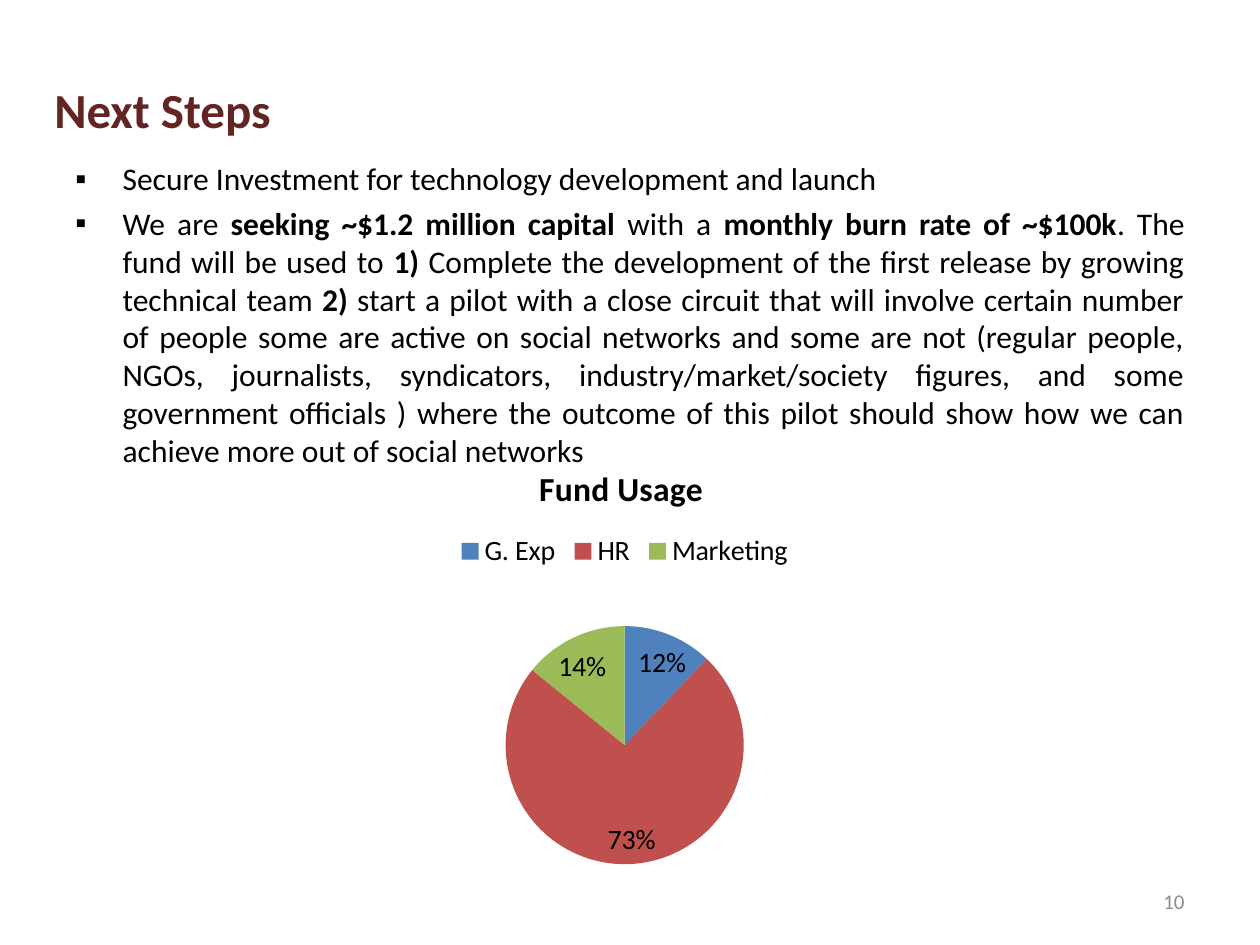
from lxml.etree import SubElement
from pptx import Presentation
from pptx.chart.data import CategoryChartData
from pptx.dml.color import RGBColor
from pptx.enum.chart import XL_CHART_TYPE as ChartType, XL_LABEL_POSITION as LabelPosition
from pptx.enum.chart import XL_LEGEND_POSITION as LegendPosition
from pptx.enum.text import MSO_ANCHOR as Anchor, PP_ALIGN as Align
from pptx.oxml.ns import qn
from pptx.util import Pt

FONT = "Calibri"
BLACK = RGBColor(0x00, 0x00, 0x00)
MAROON = RGBColor(0x63, 0x25, 0x23)
GRAY = RGBColor(0x8C, 0x8C, 0x8C)
BLUE = RGBColor(0x4F, 0x81, 0xBD)
RED = RGBColor(0xC0, 0x50, 0x4D)
GREEN = RGBColor(0x9B, 0xBB, 0x59)

STEPS = [
    [("Secure Investment for technology development and launch", False)],
    [
        ("We are ", False),
        ("seeking ~$1.2 million capital", True),
        (" with a ", False),
        ("monthly burn rate of ~$100k", True),
        (". The fund will be used to ", False),
        ("1)", True),
        (" Complete the development of the first release by growing technical team ", False),
        ("2)", True),
        (" start a pilot with a close circuit that will involve certain number of people "
         "some are active on social networks and some are not (regular people, NGOs, "
         "journalists, syndicators, industry/market/society figures, and some government "
         "officials ) where the outcome of this pilot should show how we can achieve more "
         "out of social networks", False),
    ],
]
FUND_USAGE = [("G. Exp", 12, BLUE), ("HR", 73, RED), ("Marketing", 14, GREEN)]


def style_font(font, size, color=BLACK, bold=False):
    """Set the typeface, size, colour and weight of a font."""
    font.name, font.size, font.bold = FONT, Pt(size), bold
    font.color.rgb = color


def add_frame(slide, box, anchor=Anchor.TOP):
    """Add a wrapping text box and return its text frame."""
    frame = slide.shapes.add_textbox(*map(Pt, box)).text_frame
    frame.word_wrap = True
    frame.vertical_anchor = anchor
    return frame


def add_line(slide, box, text, size, color, bold=False, align=Align.LEFT, anchor=Anchor.TOP):
    """Place one line of text in a box."""
    paragraph = add_frame(slide, box, anchor).paragraphs[0]
    paragraph.alignment = align
    run = paragraph.add_run()
    run.text = text
    style_font(run.font, size, color, bold)


def add_bullet(paragraph, indent):
    """Give a paragraph a hanging square bullet."""
    props = paragraph._p.get_or_add_pPr()
    props.set("marL", str(Pt(indent)))
    props.set("indent", str(-Pt(indent)))
    SubElement(props, qn("a:buFont"), typeface="Arial")
    SubElement(props, qn("a:buChar"), char="▪")


def add_steps(slide, box):
    """Place the justified list of next steps."""
    frame = add_frame(slide, box)
    for index, step in enumerate(STEPS):
        paragraph = frame.add_paragraph() if index else frame.paragraphs[0]
        add_bullet(paragraph, 27)
        paragraph.alignment = Align.JUSTIFY
        paragraph.line_spacing = 1.0 if index else 0.9
        paragraph.space_before = Pt(3.6 if index else 0)
        for text, bold in step:
            run = paragraph.add_run()
            run.text = text
            style_font(run.font, 18, bold=bold)


def set_layout(element, **fractions):
    """Fix a chart part at fractions of the chart area."""
    layout = element.find(qn("c:layout"))
    if layout is None:
        layout = element.makeelement(qn("c:layout"))
        leading = [qn("c:tx"), qn("c:legendPos")]
        element.insert(sum(child.tag in leading for child in element), layout)
    manual = SubElement(layout, qn("c:manualLayout"))
    if element.tag == qn("c:plotArea"):
        SubElement(manual, qn("c:layoutTarget"), val="inner")
    for side in "xy":
        SubElement(manual, qn(f"c:{side}Mode"), val="edge")
    for key, value in fractions.items():
        SubElement(manual, qn(f"c:{key}"), val=str(value))


def add_fund_chart(slide, box):
    """Place the fund usage pie with its title and legend."""
    names, shares, colors = zip(*FUND_USAGE)
    data = CategoryChartData()
    data.categories = names
    data.add_series("Series 1", shares)
    chart = slide.shapes.add_chart(ChartType.PIE, *map(Pt, box), data).chart
    style_font(chart.font, 16)

    title = chart.chart_title
    run = title.text_frame.paragraphs[0].add_run()
    run.text = "Fund Usage"
    style_font(run.font, 19.2, bold=True)
    title.include_in_layout = False

    chart.has_legend = True
    chart.legend.position = LegendPosition.TOP
    chart.legend.include_in_layout = False
    style_font(chart.legend.font, 16)

    plot = chart.plots[0]
    plot.vary_by_categories = True
    for index, color in enumerate(colors):
        fill = plot.series[0].points[index].format.fill
        fill.solid()
        fill.fore_color.rgb = color

    plot.has_data_labels = True
    labels = plot.data_labels
    labels.show_value = True
    labels.number_format = '0"%"'
    labels.number_format_is_linked = False
    labels.position = LabelPosition.BEST_FIT
    style_font(labels.font, 16)

    set_layout(title._element, x=0.41, y=0.04)
    set_layout(chart.legend._element, x=0.33, y=0.2, w=0.34, h=0.1)
    set_layout(plot._element.getparent(), x=0.38, y=0.42, w=0.24, h=0.54)


def main():
    """Build the Next Steps slide and save it."""
    deck = Presentation()
    deck.slide_width, deck.slide_height = Pt(720), Pt(540)
    slide = deck.slides.add_slide(deck.slide_layouts[6])
    add_line(slide, (516, 500.5, 168, 28.75), "10", 12, GRAY,
             align=Align.RIGHT, anchor=Anchor.MIDDLE)
    add_line(slide, (24, 42, 534, 41), "Next Steps", 28, MAROON, bold=True)
    add_steps(slide, (36, 90, 648, 180))
    add_fund_chart(slide, (66, 252, 582, 252))
    deck.save("out.pptx")


if __name__ == "__main__":
    main()
